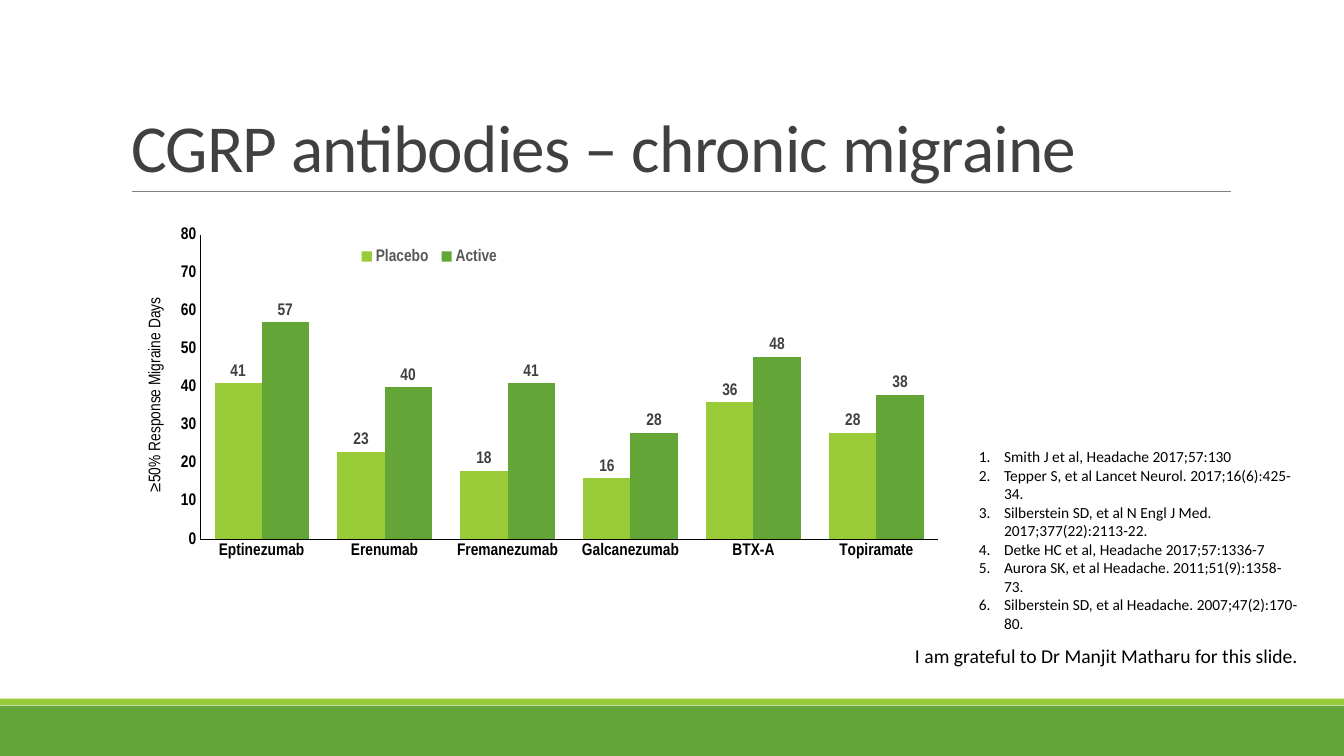
from dataclasses import dataclass

from lxml.etree import SubElement
from pptx import Presentation
from pptx.chart.data import CategoryChartData
from pptx.dml.color import RGBColor
from pptx.enum.chart import (XL_CHART_TYPE as ChartType, XL_LABEL_POSITION as LabelPosition,
                             XL_LEGEND_POSITION as LegendPosition, XL_TICK_MARK as TickMark)
from pptx.enum.shapes import MSO_CONNECTOR as Connector, MSO_SHAPE as Shape
from pptx.enum.text import MSO_ANCHOR as Anchor, MSO_AUTO_SIZE as AutoSize, PP_ALIGN as Align
from pptx.oxml.ns import qn
from pptx.util import Pt


@dataclass(frozen=True)
class Theme:
    lime: str = "99CB38"
    green: str = "63A537"
    rule: str = "808080"
    heading: str = "404040"
    legend: str = "595959"
    text: str = "000000"
    font: str = "Calibri"
    chart_font: str = "Arial Narrow"
    title_size: float = 48
    credit_size: float = 14
    chart_size: float = 12
    reference_size: float = 11


CATEGORIES = ["Eptinezumab", "Erenumab", "Fremanezumab", "Galcanezumab", "BTX-A", "Topiramate"]
PLACEBO = [41, 23, 18, 16, 36, 28]
ACTIVE = [57, 40, 41, 28, 48, 38]
REFERENCES = [
    "Smith J et al, Headache 2017;57:130",
    "Tepper S, et al Lancet Neurol. 2017;16(6):425-34.",
    "Silberstein SD, et al N Engl J Med. 2017;377(22):2113-22.",
    "Detke HC et al, Headache 2017;57:1336-7",
    "Aurora SK, et al Headache. 2011;51(9):1358-73.",
    "Silberstein SD, et al Headache. 2007;47(2):170-80.",
]


def set_font(font, name, size, color, bold=False):
    font.name, font.size, font.bold = name, Pt(size), bold
    font.color.rgb = RGBColor.from_string(color)


def place_in_chart(element, x, y, width=None, height=None, inner=False):
    """Give a chart part a manual layout, in fractions of the chart."""
    for old in element.findall(qn("c:layout")):
        element.remove(old)
    layout = element.makeelement(qn("c:layout"))
    manual = SubElement(layout, qn("c:manualLayout"))
    settings = {"layoutTarget": "inner" if inner else None, "xMode": "edge", "yMode": "edge",
                "x": x, "y": y, "w": width, "h": height}
    for tag, value in settings.items():
        if value is not None:
            SubElement(manual, qn(f"c:{tag}")).set("val", str(value))
    overlay = element.find(qn("c:overlay"))
    if overlay is None:
        element.insert(0, layout)
    else:
        overlay.addprevious(layout)


class SlideBuilder:
    def __init__(self, page, theme):
        self.page, self.theme = page, theme

    def move(self, shape, left, top, width, height):
        shape.left, shape.top, shape.width, shape.height = map(Pt, (left, top, width, height))

    def band(self, top, height, color):
        box = self.page.shapes.add_shape(Shape.RECTANGLE, 0, Pt(top), Pt(960), Pt(height))
        box.shadow.inherit = False
        box.fill.solid()
        box.fill.fore_color.rgb = RGBColor.from_string(color)
        box.line.fill.background()

    def rule(self, left, right, y):
        line = self.page.shapes.add_connector(Connector.STRAIGHT, Pt(left), Pt(y), Pt(right), Pt(y))
        line.line.width = Pt(0.5)
        line.line.color.rgb = RGBColor.from_string(self.theme.rule)
        SubElement(line._element.spPr, qn("a:effectLst"))

    def title(self, text, *place):
        box = self.page.shapes.title
        self.move(box, *place)
        frame = box.text_frame
        frame.text = text
        frame.auto_size, frame.vertical_anchor = AutoSize.NONE, Anchor.BOTTOM
        para = frame.paragraphs[0]
        para.alignment, para.line_spacing = Align.LEFT, 0.85
        span = para.runs[0]
        set_font(span.font, self.theme.font, self.theme.title_size, self.theme.heading)
        span.font._element.set("spc", "-50")

    def numbered_list(self, items, *place):
        box = self.page.placeholders[1]
        self.move(box, *place)
        frame = box.text_frame
        frame.text = "\n".join(items)
        frame.auto_size, frame.vertical_anchor = AutoSize.NONE, Anchor.TOP
        for para in frame.paragraphs:
            para.space_before = Pt(0)
            properties = para._element.get_or_add_pPr()
            properties.set("marL", str(Pt(18)))
            properties.set("indent", str(-Pt(18)))
            SubElement(properties, qn("a:buFont")).set("typeface", "+mj-lt")
            SubElement(properties, qn("a:buAutoNum")).set("type", "arabicPeriod")
            set_font(para.font, self.theme.font, self.theme.reference_size, self.theme.text)

    def label(self, text, *place):
        box = self.page.shapes.add_textbox(*map(Pt, place))
        box.text_frame.word_wrap = True
        box.text_frame.text = text
        span = box.text_frame.paragraphs[0].runs[0]
        set_font(span.font, self.theme.font, self.theme.credit_size, self.theme.text)

    def chart_text(self, font, color, bold=True):
        set_font(font, self.theme.chart_font, self.theme.chart_size, color, bold)

    def axis(self, axis):
        axis.has_major_gridlines = False
        axis.major_tick_mark = axis.minor_tick_mark = TickMark.NONE
        axis.format.line.width = Pt(0.75)
        axis.format.line.color.rgb = RGBColor.from_string(self.theme.text)
        self.chart_text(axis.tick_labels.font, self.theme.text)

    def column_chart(self, categories, series, value_title, *place):
        """Draw clustered columns; series maps a name to its values and colour."""
        data = CategoryChartData()
        data.categories = categories
        for name, (values, _) in series.items():
            data.add_series(name, values)
        chart = self.page.shapes.add_chart(ChartType.COLUMN_CLUSTERED, *map(Pt, place), data).chart
        chart.has_title = False
        set_font(chart.font, self.theme.font, 10, self.theme.text)
        plot = chart.plots[0]
        plot.gap_width, plot.overlap, plot.vary_by_categories = 61, 0, False
        for column, (_, color) in zip(plot.series, series.values()):
            column.format.fill.solid()
            column.format.fill.fore_color.rgb = RGBColor.from_string(color)
            labels = column.data_labels
            labels.show_value, labels.position = True, LabelPosition.OUTSIDE_END
            self.chart_text(labels.font, self.theme.heading)

        values = chart.value_axis
        self.axis(chart.category_axis)
        self.axis(values)
        values.minimum_scale, values.maximum_scale, values.major_unit = 0, 80, 10
        frame = values.axis_title.text_frame
        frame.text = value_title
        self.chart_text(frame.paragraphs[0].runs[0].font, self.theme.text, bold=False)
        turn = frame._element.find(qn("a:bodyPr"))
        turn.set("rot", "-5400000")
        turn.set("vert", "horz")

        chart.has_legend = True
        chart.legend.position = LegendPosition.BOTTOM
        chart.legend.include_in_layout = False
        self.chart_text(chart.legend.font, self.theme.legend)
        place_in_chart(chart._chartSpace.chart.plotArea, 0.095, 0.043, 0.885, 0.803, inner=True)
        place_in_chart(chart.legend._element, 0.28, 0.065, 0.18, 0.07)
        place_in_chart(values.axis_title._element, 0.026, 0.2)


def main():
    deck = Presentation()
    deck.slide_width, deck.slide_height = Pt(960), Pt(540)
    theme = Theme()
    slide = SlideBuilder(deck.slides.add_slide(deck.slide_layouts[1]), theme)
    slide.band(504, 36, theme.green)
    slide.band(499, 4.7, theme.lime)
    slide.rule(94.3, 879, 136.8)
    slide.title("CGRP antibodies – chronic migraine", 86.4, 22.5, 792, 114.3)
    series = {"Placebo": (PLACEBO, theme.lime), "Active": (ACTIVE, theme.green)}
    slide.column_chart(CATEGORIES, series, "≥50% Response Migraine Days", 86.4, 156.2, 595.5, 270.7)
    slide.numbered_list(REFERENCES, 692, 316, 244, 140.4)
    slide.label("I am grateful to Dr Manjit Matharu for this slide.", 646.5, 456.5, 300.2, 24.5)
    deck.save("out.pptx")


if __name__ == "__main__":
    main()
